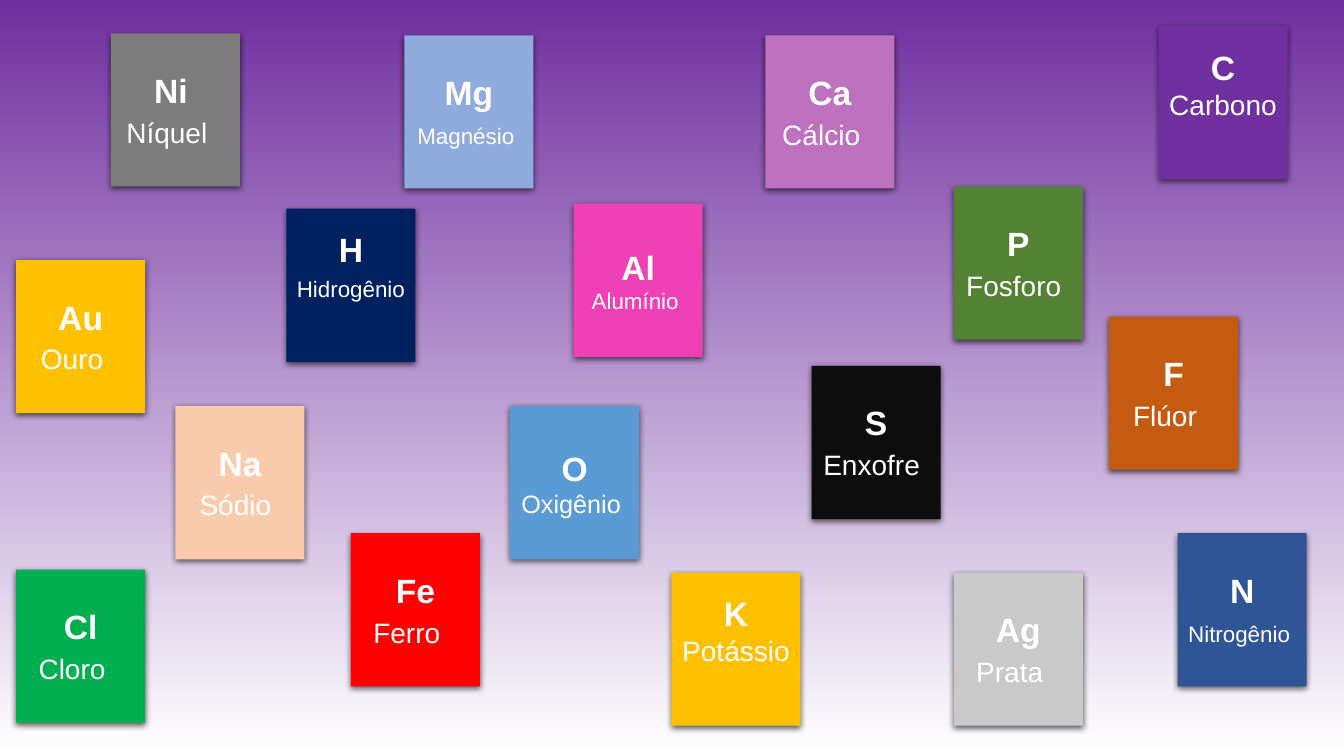
"""Build a slide of coloured chemical element cards on a purple gradient."""
from dataclasses import dataclass

from lxml.etree import SubElement
from pptx import Presentation
from pptx.dml.color import RGBColor
from pptx.enum.shapes import MSO_SHAPE as Shape
from pptx.enum.text import MSO_ANCHOR as Anchor, PP_ALIGN as Align
from pptx.oxml.ns import qn
from pptx.util import Inches, Pt

CARD_WIDTH, CARD_HEIGHT = 1.28, 1.52
SYMBOL_SIZE = 24
INSET = 0.05
LOW_LINE = 0.38


@dataclass
class Element:
    """One card: its symbol, name, place, colour and text spacing."""
    symbol: str
    name: str
    left: float
    top: float
    fill: str
    name_size: int = 20
    line_size: int = 24
    name_shift: float = 0.17
    symbol_shift: float = 0
    raised: bool = False


ELEMENTS = [
    Element("Na", "Sódio", 1.74, 4.03, "F8CBAD", name_shift=0.09),
    Element("Ni", "Níquel", 1.1, 0.33, "7C7C7C", symbol_shift=0.09),
    Element("F", "Flúor", 11, 3.14, "C55A11"),
    Element("Fe", "Ferro", 3.48, 5.29, "FF0000"),
    Element("Al", "Alumínio", 5.69, 2.02, "F040B5", 16, 16, 0.06),
    Element("O", "Oxigênio", 5.06, 4.03, "5B9BD5", 18, 18, 0.07),
    Element("K", "Potássio", 6.66, 5.68, "FFC000", 20, 20, 0, raised=True),
    Element("Au", "Ouro", 0.16, 2.58, "FFC000"),
    Element("Ag", "Prata", 9.46, 5.68, "C9C9C9"),
    Element("P", "Fosforo", 9.46, 1.85, "548235", name_shift=0.09),
    Element("Cl", "Cloro", 0.16, 5.65, "00B050"),
    Element("Mg", "Magnésio", 4.01, 0.35, "8FAADC", 16, name_shift=0.06),
    Element("S", "Enxofre", 8.05, 3.63, "0D0D0D", name_shift=0.09),
    Element("Ca", "Cálcio", 7.59, 0.35, "BD71BF"),
    Element("N", "Nitrogênio", 11.68, 5.29, "2F5597", 16, name_shift=0.06),
    Element("H", "Hidrogênio", 2.84, 2.07, "002060", 16, 20, 0, raised=True),
    Element("C", "Carbono", 11.49, 0.26, "7030A0", 20, 20, 0, raised=True),
]


def color(value: str) -> RGBColor:
    """Turn a hex string into a colour."""
    return RGBColor.from_string(value)


def apply(target, values: dict) -> None:
    """Set each named attribute of the target."""
    for key, value in values.items():
        setattr(target, key, value)


def add_shadow(card) -> None:
    """Give a card a soft shadow below it."""
    card.shadow.inherit = False
    effects = card._element.spPr.find(qn("a:effectLst"))
    shadow = SubElement(effects, qn("a:outerShdw"), blurRad=str(Pt(4.5)),
                        dist=str(Pt(1.5)), dir="5400000", algn="ctr", rotWithShape="0")
    black = SubElement(shadow, qn("a:srgbClr"), val="000000")
    SubElement(black, qn("a:alpha"), val="63000")


def write_line(paragraph, text: str, size: int, bold: bool, shift: float, before: float) -> None:
    """Write one centred line, moved left by a right margin."""
    apply(paragraph, {"alignment": Align.CENTER, "space_before": Pt(before)})
    if shift:
        paragraph._p.get_or_add_pPr().set("marR", str(Inches(shift)))
    run = paragraph.add_run()
    run.text = text
    apply(run.font, {"name": "Arial", "size": Pt(size), "bold": bold})
    run.font.color.rgb = color("FFFFFF")


def add_card(slide, element: Element) -> None:
    """Draw the card of one element."""
    card = slide.shapes.add_shape(Shape.RECTANGLE, Inches(element.left), Inches(element.top),
                                  Inches(CARD_WIDTH), Inches(CARD_HEIGHT))
    card.fill.solid()
    card.fill.fore_color.rgb = color(element.fill)
    card.line.fill.background()
    add_shadow(card)
    extra = element.line_size - element.name_size
    foot = INSET + 0.25 * extra / 72 + LOW_LINE * element.raised
    frame = card.text_frame
    apply(frame, {"word_wrap": True, "vertical_anchor": Anchor.MIDDLE,
                  "margin_bottom": Inches(foot)})
    write_line(frame.paragraphs[0], element.symbol, SYMBOL_SIZE, True, element.symbol_shift, 0)
    write_line(frame.add_paragraph(), element.name, element.name_size, False,
               element.name_shift, 0.9 * extra)


def main() -> None:
    """Build and save the slide."""
    deck = Presentation()
    apply(deck, {"slide_width": Inches(13.33), "slide_height": Inches(7.5)})
    slide = deck.slides.add_slide(deck.slide_layouts[6])
    backdrop = slide.background.fill
    backdrop.gradient()
    backdrop.gradient_angle = 270
    for stop, shade in zip(backdrop.gradient_stops, ("7030A0", "FFFFFF")):
        stop.color.rgb = color(shade)
    for element in ELEMENTS:
        add_card(slide, element)
    deck.save("out.pptx")


if __name__ == "__main__":
    main()
